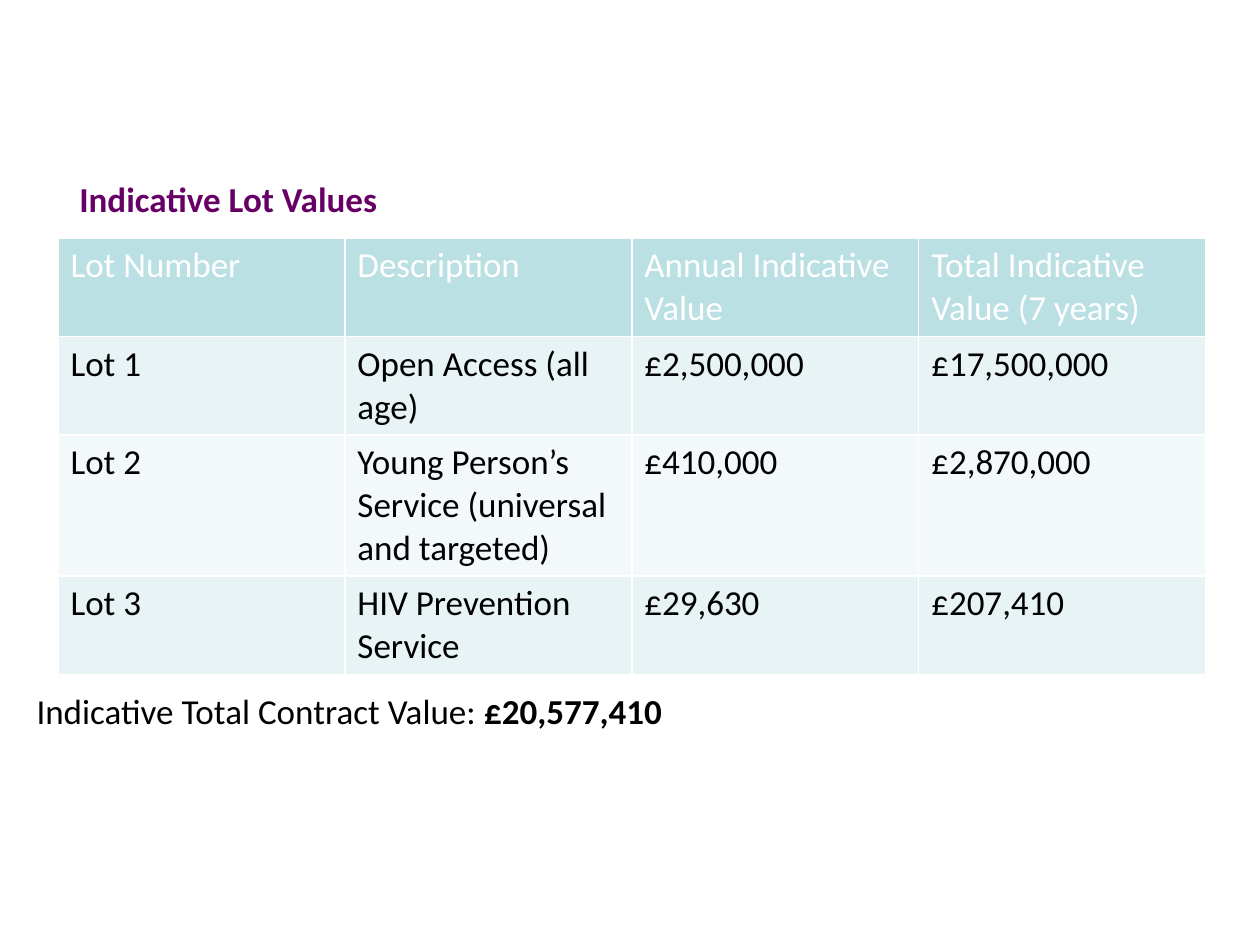
import pptx
import pptx.util
import pptx.dml.color
import pptx.enum.text
import pptx.oxml

RGBColor = pptx.dml.color.RGBColor
Pt = pptx.util.Pt
ANCHOR = pptx.enum.text.MSO_ANCHOR
ALIGN = pptx.enum.text.PP_ALIGN

PLUM = RGBColor(0x66, 0x00, 0x66)
BLACK = RGBColor(0x00, 0x00, 0x00)
WHITE = RGBColor(0xFF, 0xFF, 0xFF)
TEAL = RGBColor(0xBB, 0xE0, 0xE3)
BANDS = (RGBColor(0xE7, 0xF3, 0xF4), RGBColor(0xF3, 0xF9, 0xFA))

UNIT = pptx.util.Inches(0.1)
LINE, PAD = 3.4, 1

LOTS = (
    (2, "Lot Number", "Description", "Annual Indicative Value",
     "Total Indicative Value (7 years)"),
    (2, "Lot 1", "Open Access (all age)", "£2,500,000", "£17,500,000"),
    (3, "Lot 2", "Young Person’s Service (universal and targeted)",
     "£410,000", "£2,870,000"),
    (2, "Lot 3", "HIV Prevention Service", "£29,630", "£207,410"),
)


def grid(*cells):
    return [round(cell * UNIT) for cell in cells]


def place(shape, box):
    shape.left, shape.top, shape.width, shape.height = grid(*box)


def style(para, color, bold=False):
    font = para.font
    font.name, font.size, font.bold = "Calibri", Pt(20), bold
    font.color.rgb = color


def add_head(slide, box):
    title = slide.shapes.title
    place(title, box)
    frame = title.text_frame
    frame.text = "Indicative Lot Values"
    frame.vertical_anchor = ANCHOR.MIDDLE
    para = frame.paragraphs[0]
    para.alignment = ALIGN.LEFT
    style(para, PLUM, True)


def add_total(slide, box):
    body = slide.placeholders[1]
    place(body, box)
    frame = body.text_frame
    frame.auto_size = pptx.enum.text.MSO_AUTO_SIZE.NONE
    para = frame.paragraphs[0]
    props = para._p.get_or_add_pPr()
    props.set("marL", "0")
    props.set("indent", "0")
    props.append(pptx.oxml.parse_xml(
        '<a:buNone xmlns:a='
        '"http://schemas.openxmlformats.org/drawingml/2006/main"/>'))
    para.space_before = Pt(0)
    style(para, BLACK)
    para.add_run().text = "Indicative Total Contract Value: "
    total = para.add_run()
    total.text = "£20,577,410"
    total.font.bold = True


def add_lots(slide, box):
    count = len(LOTS[0]) - 1
    table = slide.shapes.add_table(len(LOTS), count, *grid(*box)).table
    for col in table.columns:
        col.width = round(box[2] * UNIT / count)
    for index, (lines, *texts) in enumerate(LOTS):
        table.rows[index].height = grid(lines * LINE + PAD)[0]
        fill = BANDS[(index - 1) % 2] if index else TEAL
        for cell, text in zip(table.rows[index].cells, texts):
            cell.text = text
            cell.fill.solid()
            cell.fill.fore_color.rgb = fill
            style(cell.text_frame.paragraphs[0], BLACK if index else WHITE)


def main():
    deck = pptx.Presentation()
    deck.slide_width, deck.slide_height = grid(100, 75)
    slide = deck.slides.add_slide(deck.slide_layouts[1])
    add_head(slide, (5.3, 9.5, 90, 12.5))
    add_total(slide, (1.9, 54.2, 92.5, 14.5))
    add_lots(slide, (4.6, 18.9, 91.1, 34.6))
    deck.save("out.pptx")


if __name__ == "__main__":
    main()
